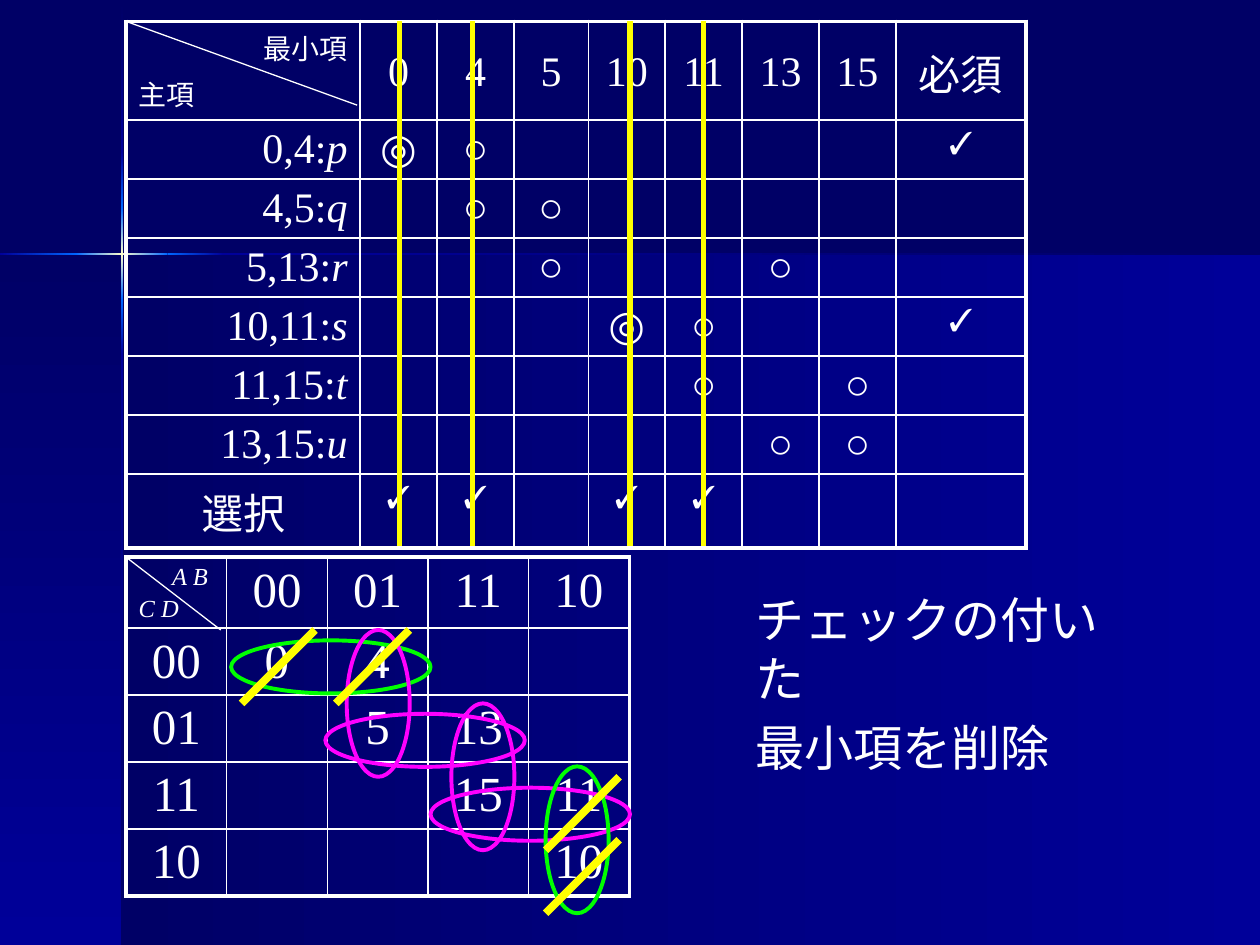
from dataclasses import dataclass

from lxml import etree
from pptx import Presentation
from pptx.dml.color import RGBColor
from pptx.enum.shapes import MSO_CONNECTOR as Line, MSO_SHAPE as Shape
from pptx.enum.text import MSO_ANCHOR as Anchor, PP_ALIGN as Align
from pptx.oxml.ns import qn
from pptx.util import Cm, Pt


@dataclass(frozen=True)
class Theme:
    font: str = "Times New Roman"
    ink: str = "FFFFFF"
    navy: str = "000066"
    blue: str = "000099"
    glow: str = "0066FF"
    flare: str = "FFFFCC"
    strike: str = "FFFF00"
    essential: str = "00FF00"
    optional: str = "FF00FF"
    large: float = 28
    body: float = 24
    check: float = 18
    label: float = 16
    small: float = 14
    frame: float = 2.25
    rule: float = 1


THEME = Theme()
CHECK = "✓"


def put_text(frame, paragraphs, size=THEME.body, aligns=(Align.CENTER,),
             line_height=None):
    """Fill a frame; each paragraph is a list of (text, italic) runs."""
    for index, runs in enumerate(paragraphs):
        paragraph = frame.paragraphs[0] if index == 0 else frame.add_paragraph()
        paragraph.alignment = aligns[min(index, len(aligns) - 1)]
        paragraph.space_before = Pt(size * 0.2 if index else 0)
        if line_height:
            paragraph.line_spacing = Pt(line_height)
        for text, italic in runs:
            run = paragraph.add_run()
            run.text = text
            run.font.name = THEME.font
            run.font.size = Pt(size)
            run.font.italic = italic
            run.font.color.rgb = RGBColor.from_string(THEME.ink)


def set_border(cell, side, width):
    line = etree.SubElement(cell._tc.get_or_add_tcPr(), qn(f"a:ln{side}"),
                            w=str(Pt(width)))
    fill = etree.SubElement(line, qn("a:solidFill"))
    etree.SubElement(fill, qn("a:srgbClr"), val=THEME.ink)


class SlideBuilder:
    def __init__(self, slide, theme):
        self.slide = slide
        self.shapes = slide.shapes
        self.theme = theme

    def background(self, color):
        fill = self.slide.background.fill
        fill.solid()
        fill.fore_color.rgb = RGBColor.from_string(color)

    def gradient_panel(self, left, top, width, height, colors, vertical=False):
        panel = self.shapes.add_shape(Shape.RECTANGLE, Cm(left), Cm(top),
                                      Cm(width), Cm(height))
        panel.shadow.inherit = False
        panel.line.fill.background()
        panel.fill.gradient()
        panel.fill.gradient_angle = 270 if vertical else 0
        stops = panel._element.spPr.find(".//" + qn("a:gsLst"))
        for stop in list(stops):
            stops.remove(stop)
        for index, color in enumerate(colors):
            position = 100000 * index // (len(colors) - 1)
            stop = etree.SubElement(stops, qn("a:gs"), pos=str(position))
            etree.SubElement(stop, qn("a:srgbClr"), val=color)

    def line(self, x1, y1, x2, y2, color, width):
        stroke = self.shapes.add_connector(Line.STRAIGHT, Cm(x1), Cm(y1),
                                           Cm(x2), Cm(y2))
        stroke.line.color.rgb = RGBColor.from_string(color)
        stroke.line.width = Pt(width)
        etree.SubElement(stroke._element.spPr, qn("a:effectLst"))

    def loop(self, left, top, width, height, color):
        ring = self.shapes.add_shape(Shape.OVAL, Cm(left), Cm(top),
                                     Cm(width), Cm(height))
        ring.shadow.inherit = False
        ring.fill.background()
        ring.line.color.rgb = RGBColor.from_string(color)
        ring.line.width = Pt(self.theme.frame)

    def table(self, left, top, widths, heights):
        """Add an empty ruled grid with a heavier outer frame."""
        grid = self.shapes.add_table(len(heights), len(widths), Cm(left), Cm(top),
                                     Cm(sum(widths)), Cm(sum(heights))).table
        grid.first_row = grid.horz_banding = False
        for column, width in zip(grid.columns, widths):
            column.width = Cm(width)
        for row, height in zip(grid.rows, heights):
            row.height = Cm(height)
        last_row, last_column = len(heights) - 1, len(widths) - 1
        for r in range(len(heights)):
            for c in range(len(widths)):
                cell = grid.cell(r, c)
                outer = {"L": c == 0, "R": c == last_column,
                         "T": r == 0, "B": r == last_row}
                for side, is_outer in outer.items():
                    set_border(cell, side,
                               self.theme.frame if is_outer else self.theme.rule)
                cell.fill.background()
                cell.margin_bottom = Cm(0.05)
        return grid

    def text(self, left, top, width, height, lines, size, line_height):
        frame = self.shapes.add_textbox(Cm(left), Cm(top), Cm(width),
                                        Cm(height)).text_frame
        frame.word_wrap = True
        put_text(frame, [[(line, False)] for line in lines], size,
                 (Align.LEFT,), line_height)


def draw_backdrop(builder):
    t = builder.theme
    builder.background(t.navy)
    fade, rise = (t.navy, t.blue), (t.blue, t.glow)
    star = (t.glow, t.flare, t.glow)
    builder.gradient_panel(2.46, 5.13, 22.94, 13.92, fade)
    builder.gradient_panel(0, 5.13, 2.46, 13.92, fade, True)
    for top, height, colors in [(0.03, 3.05, fade), (7.16, 11.89, fade[::-1]),
                                (6.05, 1.11, rise[::-1]), (3.07, 1.12, rise),
                                (4.19, 1.86, star)]:
        builder.gradient_panel(2.44, top, 0.05, height, colors, True)
    for left, width, colors in [(4.5, 20.9, fade[::-1]), (0, 1.55, rise),
                                (3.38, 1.12, rise[::-1]), (1.53, 1.85, star)]:
        builder.gradient_panel(left, 5.1, width, 0.05, colors)


def draw_karnaugh_map(builder):
    t = builder.theme
    codes = ["00", "01", "11", "10"]
    terms = {(1, 1): "0", (1, 2): "4", (2, 2): "5", (2, 3): "13",
             (3, 3): "15", (3, 4): "11", (4, 4): "10"}
    for index, code in enumerate(codes, 1):
        terms[0, index] = terms[index, 0] = code

    grid = builder.table(2.54, 11.23, [2.03] * 5, [1.43] + [1.35] * 4)
    put_text(grid.cell(0, 0).text_frame, [[("A B ", True)], [("C D", True)]],
             t.small, (Align.RIGHT, Align.LEFT))
    for position, term in terms.items():
        put_text(grid.cell(*position).text_frame, [[(term, False)]], t.large)
    builder.line(4.45, 12.7, 2.54, 11.23, t.ink, 0.75)

    for left, top, color in [(4.66, 12.91, t.essential), (6.56, 14.39, t.optional),
                             (8.68, 15.88, t.optional)]:
        builder.loop(left, top, 4.02, 1.07, color)
    for left, top, color in [(6.99, 12.7, t.optional), (9.1, 14.18, t.optional),
                             (11, 15.45, t.essential)]:
        builder.loop(left, top, 1.27, 2.96, color)


def draw_cover_table(builder):
    """Chart prime implicants against minterms, marking the essential ones."""
    t = builder.theme
    minterms = [0, 4, 5, 10, 11, 13, 15]
    implicants = {"p": (0, 4), "q": (4, 5), "r": (5, 13),
                  "s": (10, 11), "t": (11, 15), "u": (13, 15)}
    covered = [term for pair in implicants.values() for term in pair]
    essential = [pair for pair in implicants.values()
                 if any(covered.count(term) == 1 for term in pair)]
    removed = {term for pair in essential for term in pair}

    grid = builder.table(2.54, 0.43, [4.72, 1.55, 1.55, 1.5] + [1.55] * 4 + [2.62],
                         [1.99] + [1.19] * 6 + [1.49])

    def mark(row, column, text):
        put_text(grid.cell(row, column).text_frame, [[(text, False)]],
                 t.check if text == CHECK else t.body)

    put_text(grid.cell(0, 0).text_frame, [[("最小項", False)], [("主項", False)]],
             t.label, (Align.RIGHT, Align.LEFT))
    for column, heading in enumerate([*minterms, "必須"], 1):
        mark(0, column, str(heading))
        grid.cell(0, column).vertical_anchor = Anchor.MIDDLE
    for row, (name, pair) in enumerate(implicants.items(), 1):
        put_text(grid.cell(row, 0).text_frame,
                 [[("{},{}:".format(*pair), False), (name, True)]],
                 aligns=(Align.RIGHT,))
        for term in pair:
            mark(row, minterms.index(term) + 1,
                 "◎" if covered.count(term) == 1 else "○")
        if pair in essential:
            mark(row, len(minterms) + 1, CHECK)
    mark(len(implicants) + 1, 0, "選択")
    for term in removed:
        mark(len(implicants) + 1, minterms.index(term) + 1, CHECK)


def draw_strikes(builder):
    t = builder.theme
    builder.line(7.2, 2.12, 2.54, 0.43, t.ink, 0.75)
    for x in (8.05, 9.53, 12.7, 14.18):
        builder.line(x, 0.43, x, 11, t.strike, 3)
    side = 1.48
    for left, top in [(4.87, 12.7), (6.77, 12.7), (11, 15.66), (11, 16.93)]:
        builder.line(left + side, top, left, top + side, t.strike, 4.5)


def main():
    deck = Presentation()
    deck.slide_width, deck.slide_height = Cm(25.4), Cm(19.05)
    builder = SlideBuilder(deck.slides.add_slide(deck.slide_layouts[6]), THEME)
    draw_backdrop(builder)
    draw_karnaugh_map(builder)
    draw_cover_table(builder)
    builder.text(14.99, 11.76, 7.49, 2.87, ["チェックの付いた", "最小項を削除"],
                 THEME.large, 33.7)
    draw_strikes(builder)
    deck.save("out.pptx")


if __name__ == "__main__":
    main()
